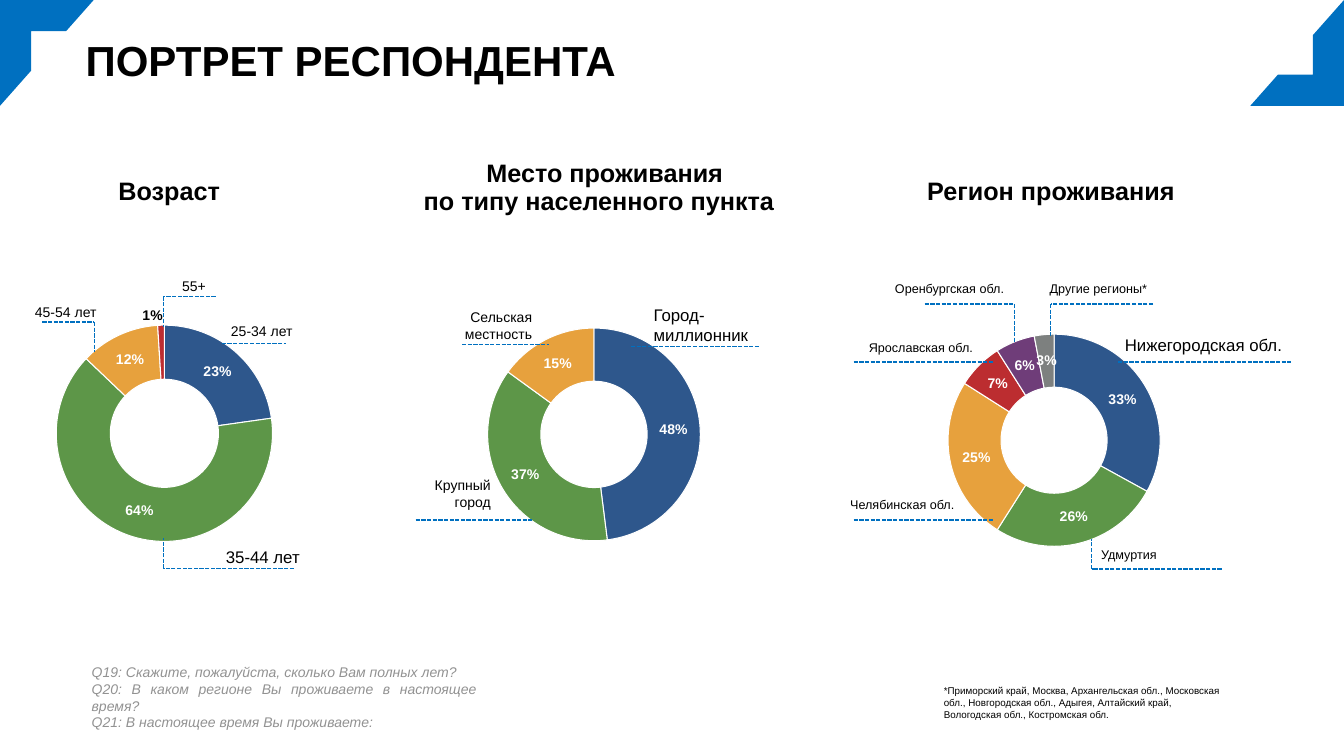
from itertools import pairwise

from lxml import etree
from pptx import Presentation
from pptx.chart.data import CategoryChartData
from pptx.dml.color import RGBColor
from pptx.enum.chart import XL_CHART_TYPE
from pptx.enum.dml import MSO_LINE
from pptx.enum.shapes import MSO_CONNECTOR, MSO_SHAPE
from pptx.enum.text import MSO_ANCHOR, MSO_AUTO_SIZE, PP_ALIGN
from pptx.oxml import parse_xml
from pptx.oxml.ns import nsdecls, qn
from pptx.util import Inches, Pt

DOUGHNUT = XL_CHART_TYPE.DOUGHNUT
DASH = MSO_LINE.SQUARE_DOT
STRAIGHT = MSO_CONNECTOR.STRAIGHT
HALF_FRAME = MSO_SHAPE.HALF_FRAME
MIDDLE, TOP = MSO_ANCHOR.MIDDLE, MSO_ANCHOR.TOP
LEFT, CENTER, RIGHT, JUSTIFY = PP_ALIGN.LEFT, PP_ALIGN.CENTER, PP_ALIGN.RIGHT, PP_ALIGN.JUSTIFY

THEME = {
    "font": "Arial", "ink": "000000", "accent": "0070C0", "muted": "929292", "paper": "FFFFFF",
    "slices": ["2E578C", "5D9648", "E7A13D", "BC2D30", "6F3D79", "7D807F"],
    "title": 60, "heading": 36, "large": 24, "label": 20, "small": 18, "footnote": 14,
}

# The grid has square cells: a column is as wide as a row is high.
CELL = Inches(1)
COLUMNS, ROWS = 26.67, 15


def color(name):
    return RGBColor.from_string(THEME[name])


def write(box, text, size="label", ink="ink", align=LEFT, anchor=MIDDLE, wrap=False,
          bold=False, italic=False, inset=(0.06, 0.06), indent=0, spacing=None):
    """Fill a box with one paragraph per line of text; a vertical tab breaks a line."""
    frame = box.text_frame
    frame.auto_size = MSO_AUTO_SIZE.NONE
    frame.word_wrap = wrap
    frame.vertical_anchor = anchor
    frame.margin_left = frame.margin_right = int(inset[0] * CELL)
    frame.margin_top = frame.margin_bottom = int(inset[1] * CELL)
    frame.text = text
    for para in frame.paragraphs:
        para.alignment = align
        if indent:
            para._p.get_or_add_pPr().set("indent", str(int(indent * CELL)))
        if spacing:
            para.line_spacing = Pt(spacing)
        for span in para.runs:
            font = span.font
            font.name, font.size = THEME["font"], Pt(THEME[size])
            font.bold, font.italic = bold, italic
            font.color.rgb = color(ink)


deck = Presentation()
deck.slide_width, deck.slide_height = int(COLUMNS * CELL), int(ROWS * CELL)
page = deck.slides.add_slide(deck.slide_layouts[5])
shapes = page.shapes

# Corner frames
frame_width, frame_height = 1.86, 2.1
for column, rotation in [(0, 0), (COLUMNS - frame_width, 180)]:
    corner = shapes.add_shape(HALF_FRAME, int(column * CELL), 0,
                              int(frame_width * CELL), int(frame_height * CELL))
    corner.rotation = rotation
    corner.shadow.inherit = False
    corner.fill.solid()
    corner.fill.fore_color.rgb = color("accent")
    corner.line.fill.background()

title = shapes.title
title.left, title.top, title.width, title.height = [
    int(cells * CELL) for cells in (1.64, -0.07, 22.97, 2.5)]
write(title, "ПОРТРЕТ РЕСПОНДЕНТА", size="title", bold=True, wrap=True)

# Doughnuts: place on the grid, plot area as shares of the chart, percentages
doughnuts = [
    ((0.23, 5.52, 6.07, 6.57), (0.146, 0.139, 0.707, 0.659), (23, 65, 12, 1)),
    ((9.3, 6.48, 4.97, 5.83), (0.068, 0.005, 0.865, 0.724), (48, 37, 15)),
    ((16.06, 5.57, 10.38, 6.8), (0.261, 0.156, 0.414, 0.619), (33, 26, 25, 7, 6, 3)),
]
for place, plot_share, values in doughnuts:
    data = CategoryChartData()
    data.categories = [str(number) for number in range(1, len(values) + 1)]
    data.add_series("Series 1", values)
    chart = shapes.add_chart(DOUGHNUT, *[int(cells * CELL) for cells in place], data).chart
    chart.has_title = chart.has_legend = False
    chart.font.name, chart.font.size = THEME["font"], Pt(10)
    chart.plots[0].vary_by_categories = False

    plot_area = chart.element.find(".//" + qn("c:plotArea"))
    for layout in plot_area.findall(qn("c:layout")):
        plot_area.remove(layout)
    sides = "".join(f'<c:{side} val="{share}"/>' for side, share in zip("xywh", plot_share))
    plot_area.insert(0, parse_xml(
        f'<c:layout {nsdecls("c")}><c:manualLayout><c:layoutTarget val="inner"/>'
        f'<c:xMode val="edge"/><c:yMode val="edge"/>{sides}</c:manualLayout></c:layout>'))

    series = chart.plots[0].series[0]
    labels = series.data_labels
    labels.show_value, labels.show_percentage = False, True
    labels.number_format, labels.number_format_is_linked = "0%", False
    labels.font.name, labels.font.size = THEME["font"], Pt(THEME["label"])
    labels.font.bold = True
    labels.font.color.rgb = color("paper")
    for index, hue in enumerate(THEME["slices"][:len(values)]):
        piece = series.points[index].format
        piece.fill.solid()
        piece.fill.fore_color.rgb = RGBColor.from_string(hue)
        piece.line.color.rgb = color("paper")
        piece.line.width = Pt(1.5)

    # A slice too thin for its label carries it outside the ring
    if min(values) < 2:
        font = series.points[values.index(min(values))].data_label.font
        font.name, font.size, font.bold = THEME["font"], Pt(THEME["label"]), True
        font.color.rgb = color("ink")
        thin = chart.element.find(".//" + qn("c:dLbl"))
        thin.find(qn("c:showVal")).set("val", "0")
        thin.find(qn("c:showPercent")).set("val", "1")
        thin.insert(1, parse_xml(
            f'<c:layout {nsdecls("c")}><c:manualLayout><c:x val="-0.03"/><c:y val="-0.11"/>'
            '</c:manualLayout></c:layout>'))
        thin.insert(2, parse_xml(
            f'<c:numFmt {nsdecls("c")} formatCode="0%" sourceLinked="0"/>'))

# Leader lines, each a chain of grid points
leaders = [
    [(4.4, 6.81), (5.68, 6.81)],
    [(4.28, 5.88), (3.25, 5.88), (3.25, 6.49)],
    [(5.83, 11.28), (3.25, 11.28), (3.25, 10.68)],
    [(0.84, 6.39), (1.87, 6.39), (1.87, 6.99)],
    [(12.52, 6.87), (15.07, 6.87)],
    [(9.17, 6.84), (10.89, 6.84)],
    [(8.25, 10.32), (10.56, 10.32)],
    [(16.94, 7.18), (19.7, 7.18)],
    [(16.94, 10.32), (19.7, 10.32)],
    [(22.19, 7.18), (25.61, 7.18)],
    [(22.88, 6.03), (20.85, 6.03), (20.85, 6.69)],
    [(18.35, 6.03), (20.13, 6.03), (20.13, 6.8)],
    [(24.24, 11.29), (21.66, 11.29), (21.66, 10.69)],
]
for leader in leaders:
    for start, end in pairwise(leader):
        line = shapes.add_connector(STRAIGHT, *[int(cells * CELL) for cells in start + end])
        line.line.color.rgb = color("accent")
        line.line.width = Pt(2)
        line.line.dash_style = DASH
        etree.SubElement(line._element.spPr, qn("a:effectLst"))

# Texts: place on the grid, wording, format
heading = {"size": "heading", "bold": True, "indent": 0.23, "spacing": 50}
centered = {"align": CENTER}
flush_right = {"align": RIGHT}
large = {"size": "large"}
small = {"size": "small"}
question = {"ink": "muted", "italic": True, "align": JUSTIFY, "wrap": True}
footnote = {"size": "footnote", "anchor": TOP, "wrap": True, "inset": (0.1, 0.05)}
texts = [
    ((2.06, 3.34, 2.41, 0.78), "Возраст", heading),
    ((8.23, 3.12, 7.31, 1.22), "Место проживания\vпо типу населенного пункта",
     heading | {"align": CENTER, "spacing": 40}),
    ((18.11, 3.34, 5.31, 0.78), "Регион проживания", heading),
    ((4.52, 6.35, 1.35, 0.45), "25-34 лет", centered),
    ((3.52, 5.45, 0.66, 0.45), "55+", centered),
    ((4.41, 10.79, 1.61, 0.52), "35-44 лет", large | centered),
    ((0.63, 5.96, 1.35, 0.45), "45-54 лет", centered),
    ((12.91, 5.98, 2.01, 0.92), "Город-\nмиллионник", large),
    ((8.56, 9.4, 1.24, 0.79), "Крупный\nгород", flush_right),
    ((9.17, 6.06, 1.45, 0.79), "Сельская\nместность", flush_right),
    ((22.26, 6.59, 4.18, 0.52), "Нижегородская обл.", large | {"wrap": True}),
    ((17.18, 6.69, 2.21, 0.42), "Ярославская обл.", small),
    ((20.77, 5.52, 2.07, 0.42), "Другие регионы*", small),
    ((17.7, 5.52, 2.32, 0.42), "Оренбургская обл.", small),
    ((21.79, 10.8, 1.25, 0.42), "Удмуртия", small),
    ((16.81, 9.79, 2.21, 0.42), "Челябинская обл.", small),
    ((1.76, 13.28, 7.76, 1.1),
     "Q19: Скажите, пожалуйста, сколько Вам полных лет?\n"
     "Q20: В каком регионе Вы проживаете в настоящее время?\n"
     "Q21: В настоящее время Вы проживаете:", question),
    ((18.63, 13.54, 5.88, 0.81),
     "*Приморский край, Москва, Архангельская обл., Московская обл., Новгородская обл., "
     "Адыгея, Алтайский край, Вологодская обл., Костромская обл.", footnote),
]
for place, text, style in texts:
    write(shapes.add_textbox(*[int(cells * CELL) for cells in place]), text, **style)

deck.save("out.pptx")
